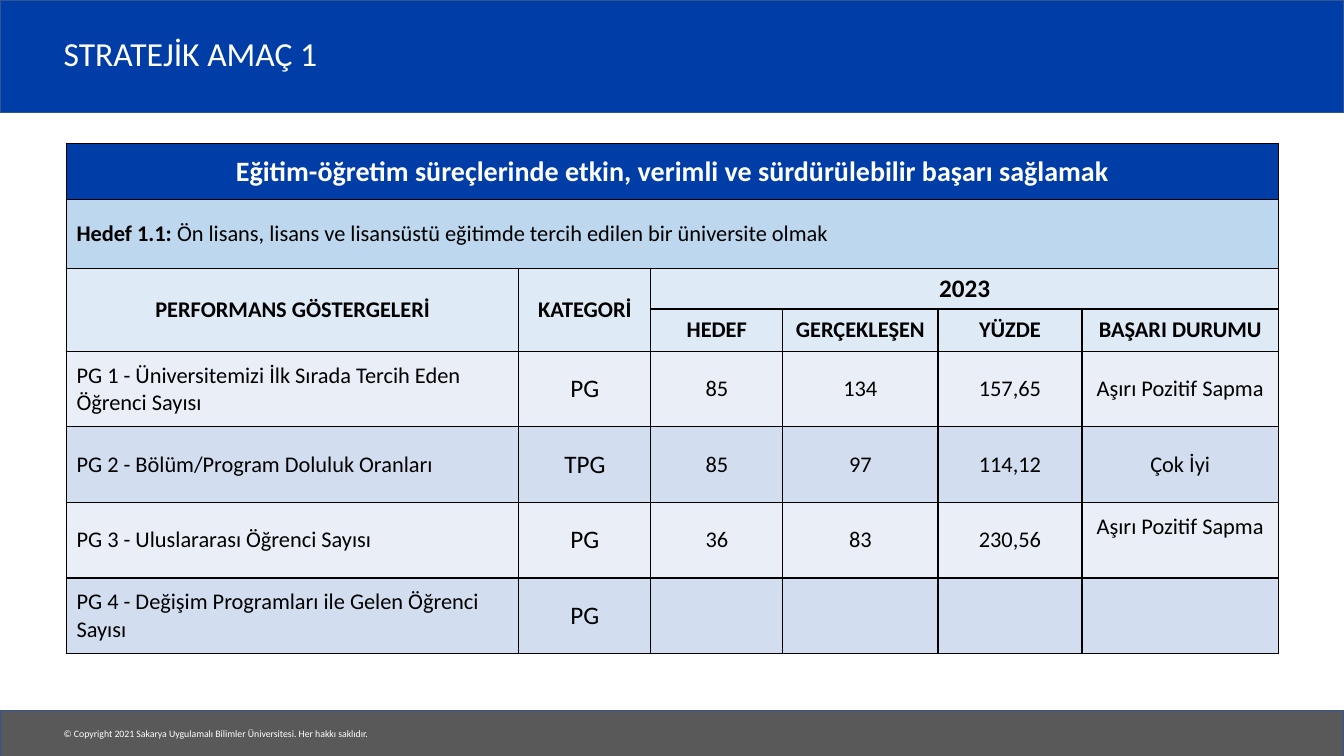
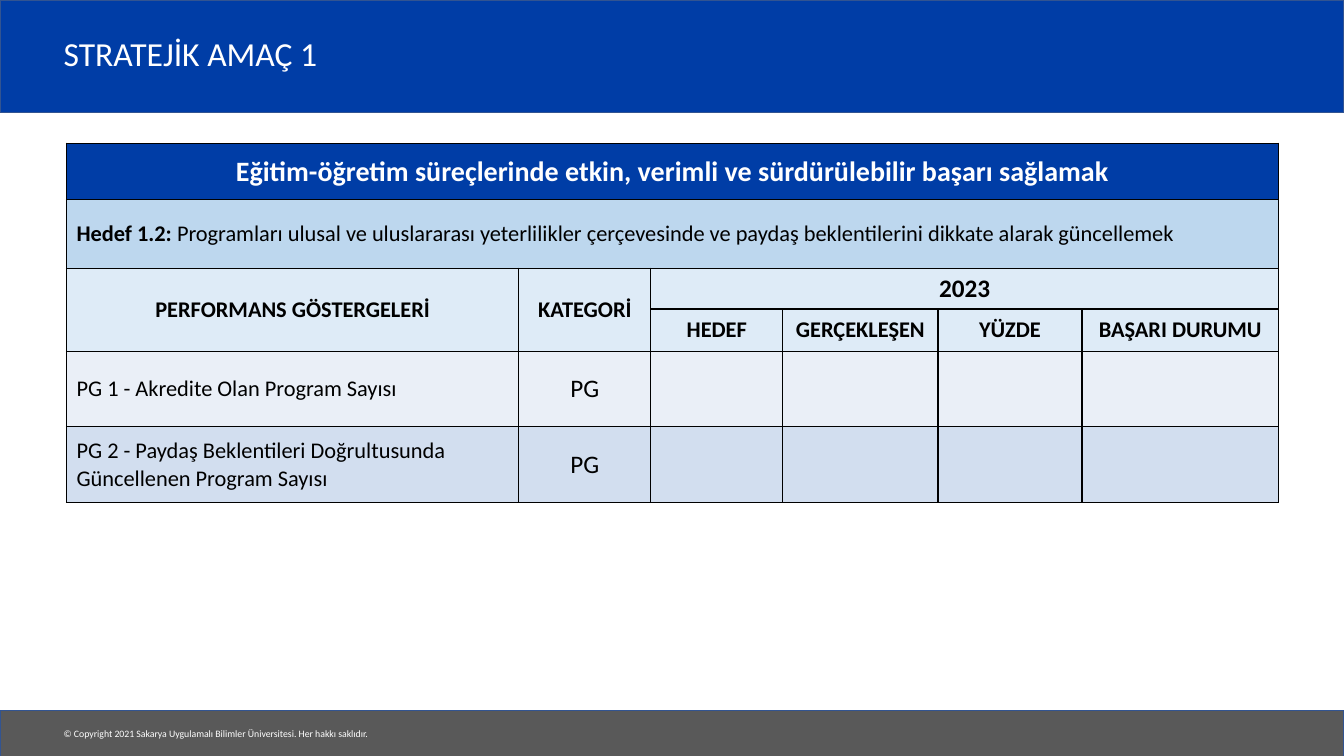
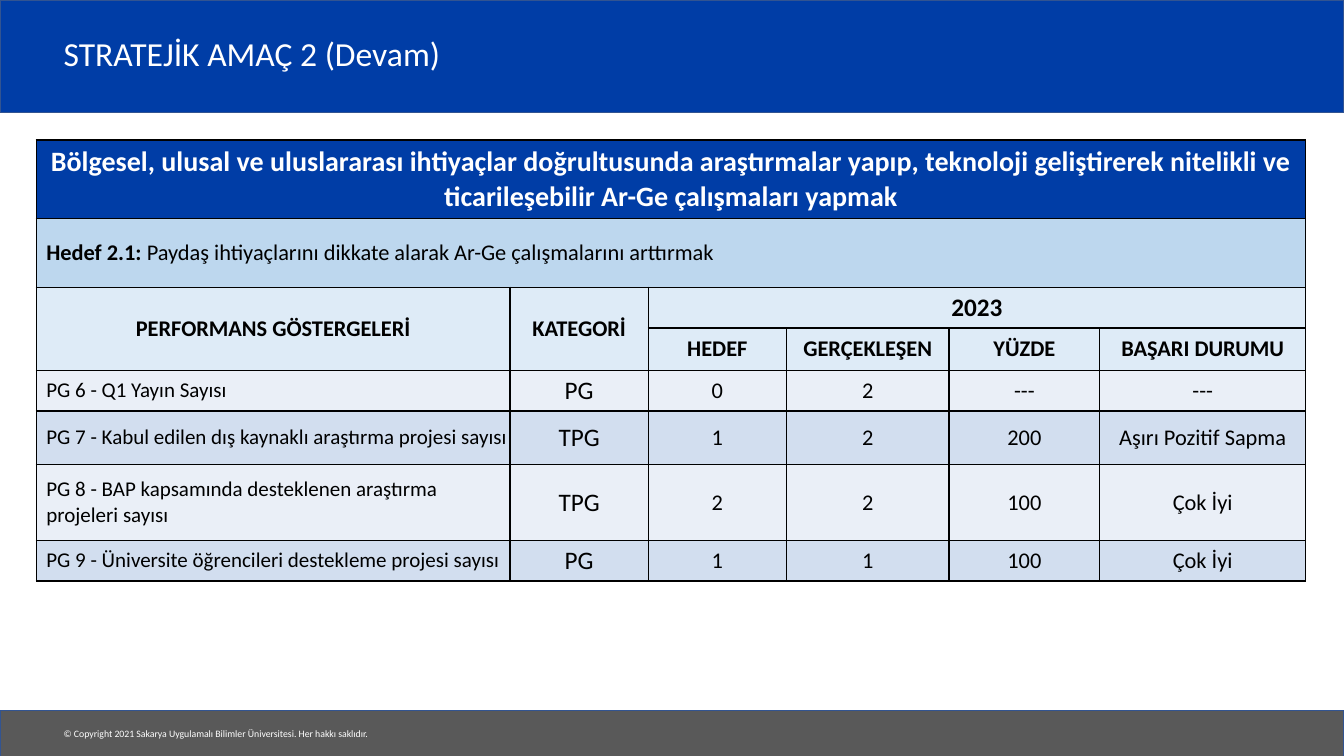
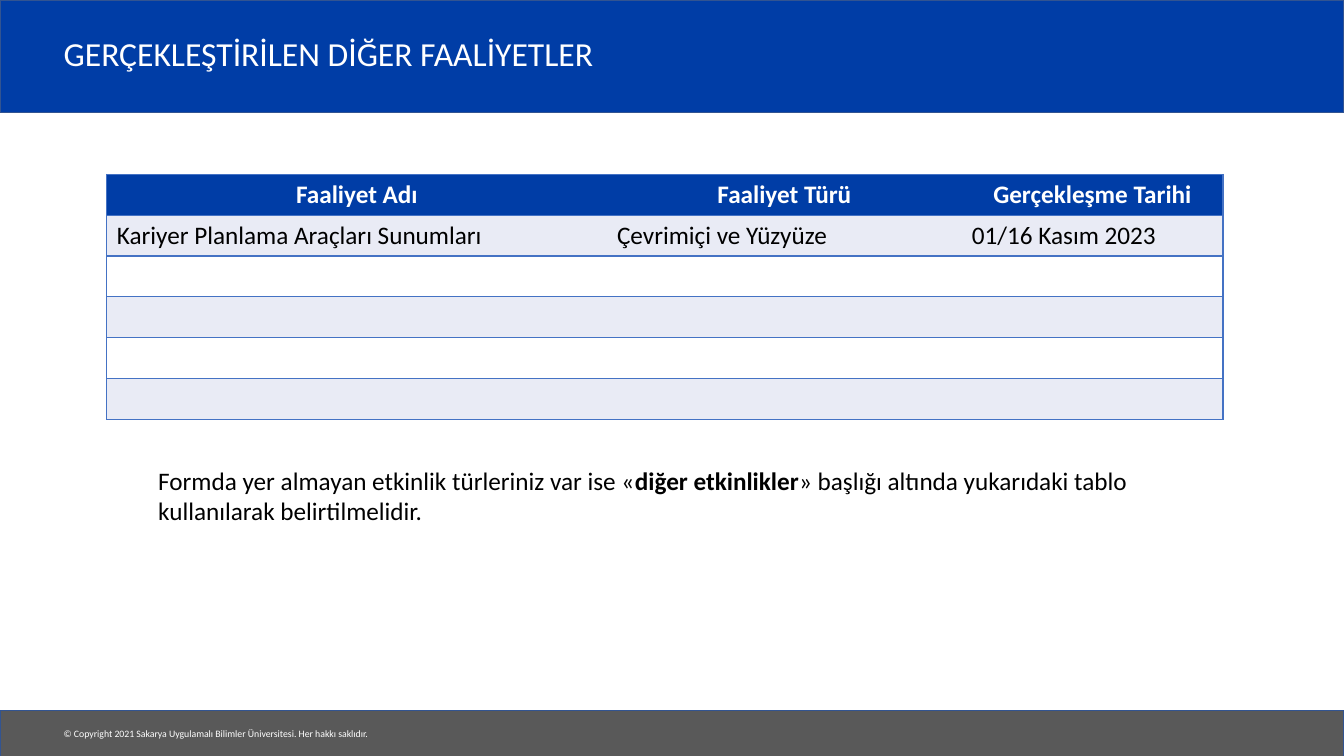
from dataclasses import dataclass

from lxml.etree import SubElement
from pptx import Presentation
from pptx.dml.color import RGBColor as Rgb
from pptx.enum.shapes import MSO_SHAPE as Shape
from pptx.enum.text import MSO_ANCHOR as Anchor, PP_ALIGN as Align
from pptx.oxml.ns import qn
from pptx.util import Inches, Pt


@dataclass(frozen=True)
class Theme:
    font: str = "Calibri"
    blue: Rgb = Rgb.from_string("003DA6")
    grey: Rgb = Rgb.from_string("595959")
    edge: Rgb = Rgb.from_string("325491")
    white: Rgb = Rgb.from_string("FFFFFF")
    black: Rgb = Rgb.from_string("000000")
    goal: Rgb = Rgb.from_string("BDD7EE")
    heading: Rgb = Rgb.from_string("DEEBF7")
    indicator_bands: tuple = (Rgb.from_string("EAEFF7"), Rgb.from_string("D2DEEF"))
    activity_bands: tuple = (Rgb.from_string("E9EBF5"), Rgb.from_string("FFFFFF"))
    activity_rule: Rgb = Rgb.from_string("4472C4")
    title: int = 24
    aim: int = 20
    body: int = 18
    detail: int = 16
    compact: int = 15
    copyright: int = 7


COPYRIGHT = "© Copyright 2021 Sakarya Uygulamalı Bilimler Üniversitesi. Her hakkı saklıdır."
INDICATOR_COLUMNS = (4.49, 1.31, 1.31, 1.54, 1.43, 1.95)
HEADING_ROWS = (9.05, 5.4, 5.6)
ACTIVITY_COLUMNS = (4.96, 3.52, 2.59)
MEASURES = ("HEDEF", "GERÇEKLEŞEN", "YÜZDE", "BAŞARI DURUMU")


class Deck:
    def __init__(self, theme):
        self.theme = theme
        self.file = Presentation()
        self.file.slide_width, self.file.slide_height = Inches(13.33), Inches(7.5)
        self.slide = None

    def x(self, columns):
        return round(self.file.slide_width * columns / 100)

    def y(self, rows):
        return round(self.file.slide_height * rows / 100)

    def place(self, left, top, width, height):
        return self.x(left), self.y(top), self.x(width), self.y(height)

    def start(self, title):
        theme = self.theme
        self.slide = self.file.slides.add_slide(self.file.slide_layouts[6])
        self.band(0, 14.9, theme.blue)
        self.band(94, 6.1, theme.grey)
        self.text((4, 95.6, 24.7, 2.95), [COPYRIGHT], theme.copyright, theme.white, wrap=False)
        heading = self.text((4, 2.5, 82.7, 9.75), [title], theme.title, theme.white)
        heading.vertical_anchor = Anchor.MIDDLE
        heading.paragraphs[0].line_spacing = 0.9

    def band(self, top, height, color):
        band = self.slide.shapes.add_shape(Shape.RECTANGLE, *self.place(0, top, 100, height))
        band.shadow.inherit = False
        band.fill.solid()
        band.fill.fore_color.rgb = color
        band.line.color.rgb = self.theme.edge
        band.line.width = Pt(1)

    def text(self, area, parts, size, color, wrap=True):
        frame = self.slide.shapes.add_textbox(*self.place(*area)).text_frame
        frame.word_wrap = wrap
        self.typeset(frame, parts, size, color)
        return frame

    def typeset(self, frame, parts, size, color, bold=False, align=Align.LEFT):
        paragraph = frame.paragraphs[0]
        paragraph.alignment = align
        font = paragraph.font
        font.name, font.size, font.bold = self.theme.font, Pt(size), bold
        font.color.rgb = color
        for part in parts:
            words, strong = part if isinstance(part, tuple) else (part, None)
            run = paragraph.add_run()
            run.text = words
            if strong is not None:
                run.font.bold = strong

    def table(self, left, top, width, weights, heights, fills, rule, inner=True):
        area = self.place(left, top, width, sum(heights))
        table = self.slide.shapes.add_table(len(heights), len(weights), *area).table
        table.first_row = table.horz_banding = False
        for column, weight in zip(table.columns, weights):
            column.width = self.x(width * weight / sum(weights))
        last = len(weights) - 1
        for row, height, fill in zip(table.rows, heights, fills):
            row.height = self.y(height)
            for index, cell in enumerate(row.cells):
                self.border(cell, rule, inner or index == 0, inner or index == last)
                cell.fill.solid()
                cell.fill.fore_color.rgb = fill
                cell.vertical_anchor = Anchor.MIDDLE
        return table

    def border(self, cell, color, left, right):
        properties = cell._tc.get_or_add_tcPr()
        for side, shown in (("L", left), ("R", right), ("T", True), ("B", True)):
            line = SubElement(properties, qn(f"a:ln{side}"), w=str(Pt(1)))
            if shown:
                fill = SubElement(line, qn("a:solidFill"))
                SubElement(fill, qn("a:srgbClr"), val=str(color))
            else:
                SubElement(line, qn("a:noFill"))

    def indicators(self, area, aim, aim_height, goal, indicators, heights, name_size):
        theme = self.theme
        fills = [theme.blue, theme.goal, theme.heading, theme.heading]
        fills += [theme.indicator_bands[i % 2] for i in range(len(indicators))]
        table = self.table(*area, INDICATOR_COLUMNS, (aim_height, *HEADING_ROWS, *heights),
                           fills, theme.black)
        for first, end in (((0, 0), (0, 5)), ((1, 0), (1, 5)), ((2, 0), (3, 0)),
                           ((2, 1), (3, 1)), ((2, 2), (2, 5))):
            table.cell(*first).merge(table.cell(*end))

        def head(row, column, label, size=theme.detail, color=theme.black):
            self.typeset(table.cell(row, column).text_frame, [label], size, color, True,
                         Align.CENTER)

        head(0, 0, aim, theme.aim, theme.white)
        number, wording = goal
        self.typeset(table.cell(1, 0).text_frame, [(number + " ", True), (wording, False)],
                     theme.detail, theme.black)
        head(2, 0, "PERFORMANS GÖSTERGELERİ")
        head(2, 1, "KATEGORİ")
        head(2, 2, "2023", theme.body)
        for column, measure in enumerate(MEASURES, 2):
            head(3, column, measure)

        for row, (name, category, *results) in enumerate(indicators, 4):
            label = table.cell(row, 0)
            label.margin_right = label.margin_top = label.margin_bottom = Inches(0.01)
            self.typeset(label.text_frame, [name], name_size, theme.black)
            self.typeset(table.cell(row, 1).text_frame, [category], theme.body, theme.black,
                         align=Align.CENTER)
            for column, result in enumerate(results, 2):
                self.typeset(table.cell(row, column).text_frame, [result], theme.detail,
                             theme.black, align=Align.CENTER)
        return table

    def activities(self, area, headings, activity, empty_rows):
        theme = self.theme
        count = 1 + empty_rows
        fills = [theme.blue] + [theme.activity_bands[i % 2] for i in range(count)]
        table = self.table(*area, ACTIVITY_COLUMNS, [5.4] * (count + 1), fills,
                           theme.activity_rule, inner=False)
        for column, (heading, detail) in enumerate(zip(headings, activity)):
            self.typeset(table.cell(0, column).text_frame, [heading], theme.body, theme.white,
                         True, Align.CENTER)
            self.typeset(table.cell(1, column).text_frame, [detail], theme.body, theme.black)


def main():
    theme = Theme()
    deck = Deck(theme)
    education = "Eğitim-öğretim süreçlerinde etkin, verimli ve sürdürülebilir başarı sağlamak"
    education_area = (4.95, 18.93, 90.18)

    deck.start("STRATEJİK AMAÇ 1")
    preference = deck.indicators(
        education_area, education, 7.5,
        ("Hedef 1.1:", "Ön lisans, lisans ve lisansüstü eğitimde tercih edilen bir üniversite olmak"),
        [("PG 1 - Üniversitemizi İlk Sırada Tercih Eden Öğrenci Sayısı", "PG",
          "85", "134", "157,65", "Aşırı Pozitif Sapma"),
         ("PG 2 - Bölüm/Program Doluluk Oranları", "TPG", "85", "97", "114,12", "Çok İyi"),
         ("PG 3 - Uluslararası Öğrenci Sayısı", "PG", "36", "83", "230,56", "Aşırı Pozitif Sapma"),
         ("PG 4 - Değişim Programları ile Gelen Öğrenci Sayısı", "PG")],
        [10] * 4, theme.detail)
    preference.cell(6, 5).margin_bottom = Inches(0.32)

    deck.start("STRATEJİK AMAÇ 1")
    deck.indicators(
        education_area, education, 7.5,
        ("Hedef 1.2:", "Programları ulusal ve uluslararası yeterlilikler çerçevesinde ve "
                       "paydaş beklentilerini dikkate alarak güncellemek"),
        [("PG 1 - Akredite Olan Program Sayısı", "PG"),
         ("PG 2 - Paydaş Beklentileri Doğrultusunda Güncellenen Program Sayısı", "PG")],
        [10] * 2, theme.detail)

    deck.start("STRATEJİK AMAÇ 2 (Devam)")
    deck.indicators(
        (2.7, 18.53, 94.45),
        "Bölgesel, ulusal ve uluslararası ihtiyaçlar doğrultusunda araştırmalar yapıp, teknoloji "
        "geliştirerek nitelikli ve ticarileşebilir Ar-Ge çalışmaları yapmak", 10.4,
        ("Hedef 2.1:", "Paydaş ihtiyaçlarını dikkate alarak Ar-Ge çalışmalarını arttırmak"),
        [("PG 6 - Q1 Yayın Sayısı", "PG", "0", "2", "---", "---"),
         ("PG 7 - Kabul edilen dış kaynaklı araştırma projesi sayısı", "TPG",
          "1", "2", "200", "Aşırı Pozitif Sapma"),
         ("PG 8 - BAP kapsamında desteklenen araştırma projeleri sayısı", "TPG",
          "2", "2", "100", "Çok İyi"),
         ("PG 9 - Üniversite öğrencileri destekleme projesi sayısı", "PG",
          "1", "1", "100", "Çok İyi")],
        (5.4, 7.1, 10, 5.4), theme.compact)

    deck.start("GERÇEKLEŞTİRİLEN DİĞER FAALİYETLER")
    deck.activities(
        (7.95, 23.07, 83.05),
        ("Faaliyet Adı", "Faaliyet Türü", "Gerçekleşme Tarihi"),
        ("Kariyer Planlama Araçları Sunumları", "Çevrimiçi ve Yüzyüze", "01/16 Kasım 2023"), 4)
    deck.text(
        (11.03, 60.93, 76.6, 9.5),
        ["Formda yer almayan etkinlik türleriniz var ise «", ("diğer etkinlikler", True),
         "» başlığı altında yukarıdaki tablo kullanılarak belirtilmelidir."],
        theme.body, theme.black)

    deck.file.save("out.pptx")


if __name__ == "__main__":
    main()
